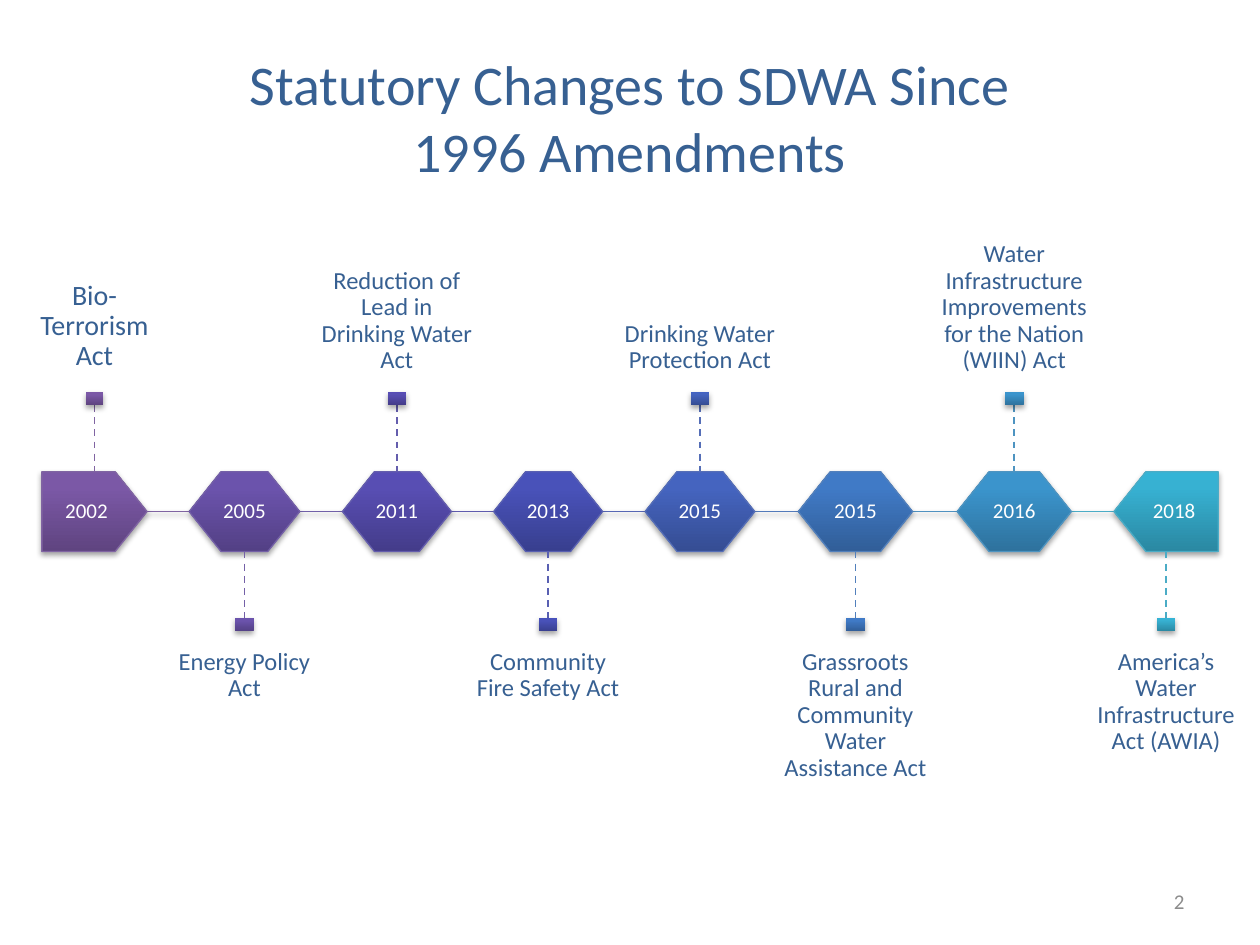
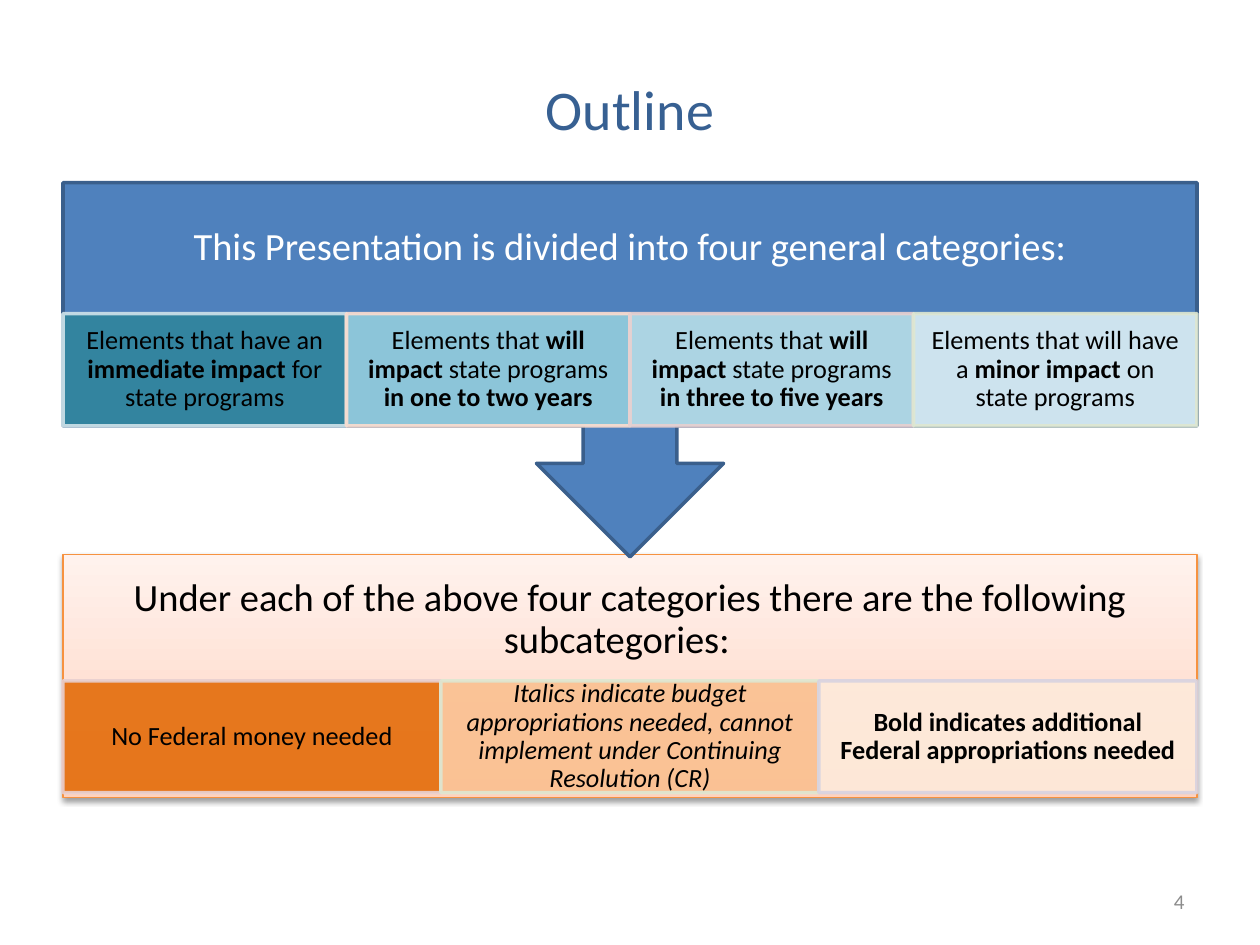
from copy import deepcopy
from itertools import accumulate

from lxml.etree import SubElement
from pptx import Presentation
from pptx.dml.color import RGBColor
from pptx.enum.dml import MSO_LINE
from pptx.enum.shapes import MSO_CONNECTOR, MSO_SHAPE
from pptx.enum.text import MSO_ANCHOR, PP_ALIGN
from pptx.oxml.ns import qn
from pptx.util import Inches, Pt

RECT, PLATE = MSO_SHAPE.RECTANGLE, MSO_SHAPE.PENTAGON
HEX, CALL = MSO_SHAPE.HEXAGON, MSO_SHAPE.UP_ARROW_CALLOUT
LINE, DASH = MSO_CONNECTOR.STRAIGHT, MSO_LINE.DASH
TOP, MID, LOW = MSO_ANCHOR.TOP, MSO_ANCHOR.MIDDLE, MSO_ANCHOR.BOTTOM
MIDDLE, RIGHT = PP_ALIGN.CENTER, PP_ALIGN.RIGHT

rgb = RGBColor.from_string
FONT = "Calibri"
NAVY, GREY = rgb("376092"), rgb("8C8C8C")
WHITE, BLACK = rgb("FFFFFF"), rgb("000000")
BLUE, EDGE, ORANGE = rgb("4F81BD"), rgb("3A5F8C"), rgb("F69240")
PEACH = [(0, rgb("FFD2BD")), (0.35, rgb("FFDED0")), (1, rgb("FFF2ED"))]

UNIT = Inches(0.5)  # the slide is a grid of 20 columns by 15 rows

# year, act, column width, gradient from dark to light, outline, link to next
ACTS = [
    ("2002", "Bio-Terrorism Act", 1.16,
     "5F4480 7B58A6 7C57A8", "8064A2", "8064A2"),
    ("2005", "Energy Policy Act", 1.22,
     "534085 6B53AC 6B52AF", "7460A7", "7160A8"),
    ("2011", "Reduction of Lead in Drinking Water Act", 1.2,
     "443C8A 584EB3 574CB6", "645DAD", "5F5BAE"),
    ("2013", "Community Fire Safety Act", 1.2,
     "383F8F 4952B9 4751BC", "5960B2", "5767B4"),
    ("2015", "Drinking Water Protection Act", 1.21,
     "354D93 4564BF 4263C3", "556EB7", "537ABA"),
    ("2015", "Grassroots Rural and Community Water Assistance Act", 1.26,
     "315E98 407AC6 3E7AC9", "5280BC", "4F91C0"),
    ("2016", "Water Infrastructure Improvements for the Nation (WIIN) Act",
     1.26, "2E729D 3B94CC 3995CF", "4E94C1", "4BACC6"),
    ("2018", "America’s Water Infrastructure Act (AWIA)", 1.15,
     "2A88A2 37B1D2 34B4D6", "4BACC6", None),
]

# text with *bold* parts, fill, outline, format
GROUPS = [
    ("Elements that have an *immediate impact *for state programs",
     "31859C", "D0E3EA", {}),
    ("Elements that *will impact *state programs *in one to two years*",
     "93CDDD", "FCDDCF", {}),
    ("Elements that *will impact *state programs *in three to five years*",
     "B7DEE8", "E8D0D0", {}),
    ("Elements that will have a *minor impact *on state programs",
     "DBEEF4", "DEE7D1", {}),
]
FUNDS = [
    ("No Federal money needed", "E46C0A", "E8D0D0", {}),
    ("Italics indicate budget appropriations needed, cannot implement "
     "under Continuing Resolution (CR)",
     "FAC090", "DEE7D1", {"italic": True}),
    ("*Bold indicates additional Federal appropriations needed*",
     "FDEADA", "D8D3E0", {}),
]


def grid(*cells):
    return [round(cell * UNIT) for cell in cells]


def part(box, x, y, w, h):
    """Return the box at these shares of another box."""
    left, top, wide, high = box
    return [round(left + x * wide), round(top + y * high),
            round(w * wide), round(h * high)]


def write(frame, text, size=14, color=NAVY, align=MIDDLE, anchor=MID,
          pad=(0, 0), space=0.9, italic=False):
    """Fill a frame with one paragraph; parts between asterisks are bold."""
    frame.word_wrap = True
    frame.vertical_anchor = anchor
    frame.margin_left = frame.margin_right = Inches(pad[0])
    frame.margin_top = frame.margin_bottom = Inches(pad[1])
    para = frame.paragraphs[0]
    para.alignment, para.line_spacing = align, space
    for i, row in enumerate(text.split("\n")):
        if i:
            para.add_line_break()
        for j, piece in enumerate(row.split("*")):
            if piece:
                run = para.add_run()
                run.text = piece
                font = run.font
                font.name, font.size, font.color.rgb = FONT, Pt(size), color
                font.bold, font.italic = j % 2 == 1, italic


def label(slide, box, text, **form):
    write(slide.shapes.add_textbox(*box).text_frame, text, **form)


def effect(shape, shade):
    """Replace the theme's effect with a soft shadow, or with none."""
    fx = SubElement(shape._element.spPr, qn("a:effectLst"))
    if shade:
        cast = SubElement(fx, qn("a:outerShdw"), blurRad=str(Pt(3.1)),
                          dist=str(Pt(1.8)), dir="5400000", rotWithShape="0")
        tint = SubElement(cast, qn("a:srgbClr"), val="000000")
        SubElement(tint, qn("a:alpha"), val=str(shade * 1000))


def shade_up(shape, stops):
    """Fill with a three-stop gradient that runs from bottom to top."""
    fill = shape.fill
    fill.gradient()
    fill.gradient_angle = 90
    first = shape._element.spPr.find(".//" + qn("a:gs"))
    first.addnext(deepcopy(first))
    for stop, (place, color) in zip(fill.gradient_stops, stops):
        stop.position, stop.color.rgb = place, color


def draw(slide, kind, box, fill, line=None, width=0.75, shade=0, alpha=100):
    shape = slide.shapes.add_shape(kind, *box)
    if isinstance(fill, list):
        shade_up(shape, fill)
    else:
        shape.fill.solid()
        shape.fill.fore_color.rgb = fill
    if line is None:
        shape.line.fill.background()
    else:
        shape.line.color.rgb, shape.line.width = line, Pt(width)
    if alpha < 100:
        for tint in shape._element.spPr.iter(qn("a:srgbClr")):
            SubElement(tint, qn("a:alpha"), val=str(alpha * 1000))
    effect(shape, shade)
    return shape


def join(slide, x1, y1, x2, y2, color, width=0.75, dash=None, shade=0):
    link = slide.shapes.add_connector(LINE, x1, y1, x2, y2)
    link.line.color.rgb, link.line.width = color, Pt(width)
    if dash:
        link.line.dash_style = dash
    effect(link, shade)


def start(deck, title, rows, page):
    """Add a slide with its title and page number."""
    slide = deck.slides.add_slide(deck.slide_layouts[5])
    head = slide.shapes.title
    head.left, head.top, head.width, head.height = grid(1, 0.6, 18, rows)
    write(head.text_frame, title, size=32, pad=(0.1, 0.05), space=1)
    label(slide, grid(14.34, 13.9, 4.66, 0.8), page, size=12, color=GREY,
          align=RIGHT, pad=(0.1, 0.05), space=1)
    return slide


def event(slide, box, act, spot, last):
    """Draw one column: year, dashed stem, marker and name of the act."""
    year, name, _, tones, edge, _ = act
    stops = list(zip((0, 0.8, 1), map(rgb, tones.split())))
    edge, ends = rgb(edge), spot in (0, last)
    up = spot % 2 == 0

    body = draw(slide, PLATE if ends else HEX, part(box, 0.14, 0.44, 0.72, 0.12),
                stops, edge, shade=35)
    body.adjustments[0] = 0.4
    if spot == last:
        body._element.spPr.xfrm.set("flipH", "1")
    write(body.text_frame, year, size=12, color=WHITE)

    x, y, _, high = part(box, 0.5, 0.34 if up else 0.56, 0, 0.1)
    join(slide, x, y, x, y + high, edge, width=1, dash=DASH)
    draw(slide, RECT, part(box, 0.44, 0.32 if up else 0.66, 0.12, 0.02),
         stops, shade=35)
    size = 14 if spot else 16
    label(slide, part(box, 0, 0 if up else 0.68, 1, 0.32), name, size=size,
          anchor=LOW if up else TOP, pad=(0, size / 100))


def timeline(slide, box):
    wide = [act[2] for act in ACTS]
    total = sum(wide)
    cols = [part(box, x / total, 0, w / total, 1)
            for x, w in zip(accumulate(wide, initial=0), wide)]
    for act, col, after in zip(ACTS, cols, cols[1:]):
        x1, y = part(col, 0.86, 0.5, 0, 0)[:2]
        x2 = part(after, 0.14, 0, 0, 0)[0]
        join(slide, x1, y, x2, y, rgb(act[5]), shade=35)
    for spot, (act, col) in enumerate(zip(ACTS, cols)):
        event(slide, col, act, spot, len(ACTS) - 1)


def panel(slide, box, text, color, tiles, head, top, high):
    """Place a heading and a row of equal tiles on a panel."""
    label(slide, part(box, 0, 0, 1, head), text, size=22, color=color,
          pad=(0.17, 0.17))
    share = 1 / len(tiles)
    for i, (words, fill, line, form) in enumerate(tiles):
        tile = draw(slide, RECT, part(box, i * share, top, share, high),
                    rgb(fill), rgb(line), width=2, alpha=90)
        write(tile.text_frame, words, size=15, color=BLACK,
              pad=(0.12, 0.02), **form)


def outline(slide):
    low, high = grid(1, 8.8, 18, 3.86), grid(1, 2.9, 18, 5.94)
    draw(slide, RECT, low, PEACH, ORANGE, shade=38)
    panel(slide, low, "Under each of the above four categories there are "
          "the following subcategories:\t", BLACK, FUNDS, 0.54, 0.52, 0.46)
    draw(slide, CALL, high, BLUE, EDGE, width=2).rotation = 180
    panel(slide, high, "This Presentation is divided into four general "
          "categories:", WHITE, GROUPS, 0.35, 0.35, 0.3)


def main():
    deck = Presentation()
    deck.slide_width, deck.slide_height = grid(20, 15)
    timeline(start(deck, "Statutory Changes to SDWA Since\n1996 Amendments",
                   2.5, "2"), grid(0.34, 2.84, 19.32, 10.56))
    outline(start(deck, "Outline", 2.24, "4"))
    deck.save("out.pptx")


if __name__ == "__main__":
    main()
